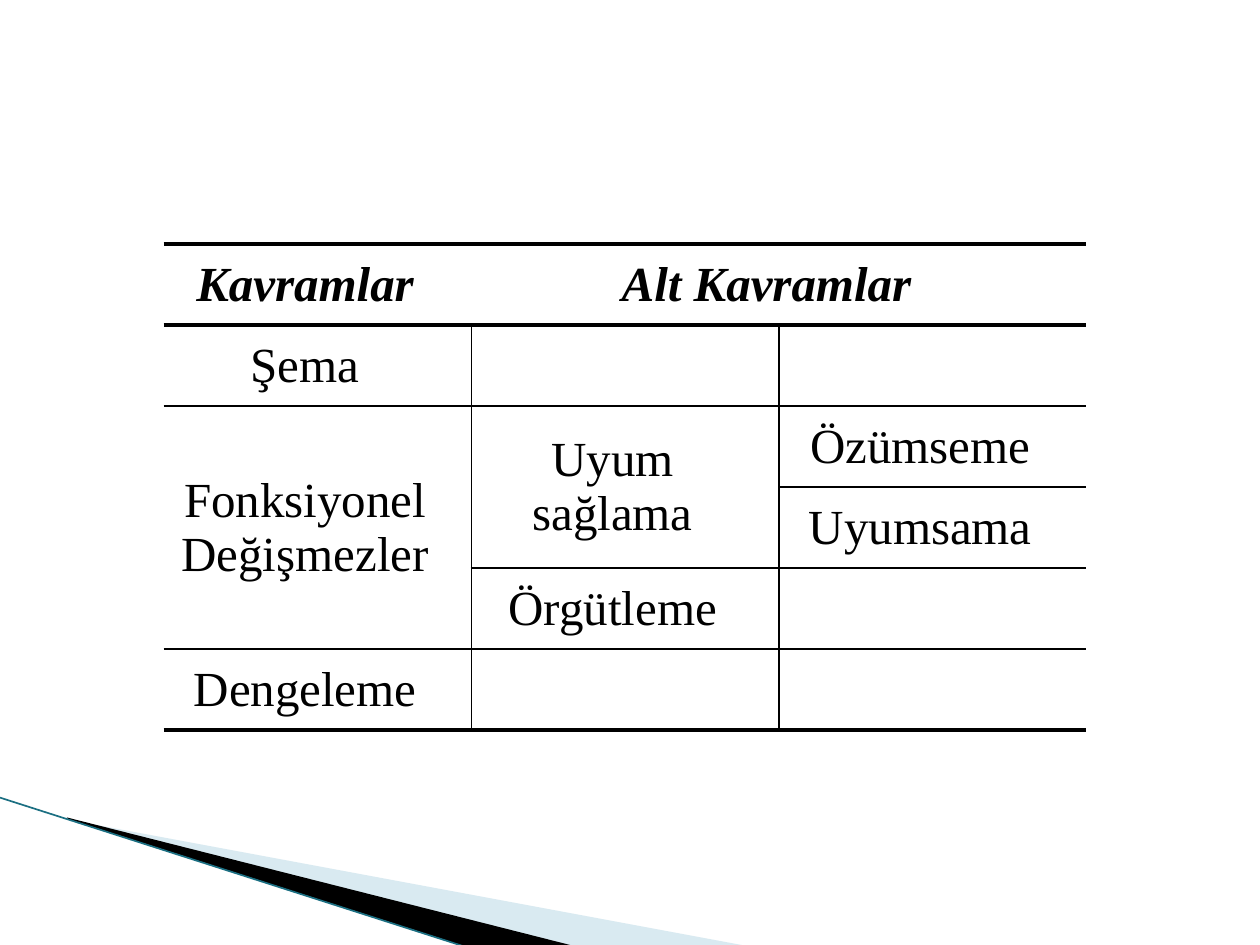
from dataclasses import dataclass
from itertools import product

from lxml.etree import SubElement
from pptx import Presentation
from pptx.dml.color import RGBColor as Rgb
from pptx.enum.shapes import MSO_CONNECTOR as Connector
from pptx.enum.text import MSO_ANCHOR as Anchor, PP_ALIGN as Align
from pptx.oxml import parse_xml
from pptx.oxml.ns import nsdecls, qn
from pptx.util import Cm, Pt


@dataclass(frozen=True)
class Theme:
    font: str = "Times New Roman"
    size: int = 28
    ink: str = "000000"
    pale: str = "A0CBDC"
    edge: str = "1B6F82"
    pale_opacity: int = 40
    edge_width: float = 0.95
    thick: float = 2.25
    thin: float = 1


THEME = Theme()
ROWS, COLS = 6, 3

CONCEPTS = [
    ("Kavramlar", 0, 0, 1, 1),
    ("Alt Kavramlar", 0, 1, 1, 2),
    ("Şema", 1, 0, 1, 1),
    ("", 1, 1, 1, 1),
    ("", 1, 2, 1, 1),
    ("Fonksiyonel Değişmezler", 2, 0, 3, 1),
    ("Uyum sağlama", 2, 1, 2, 1),
    ("Özümseme", 2, 2, 1, 1),
    ("Uyumsama", 3, 2, 1, 1),
    ("Örgütleme", 4, 1, 1, 1),
    ("", 4, 2, 1, 1),
    ("Dengeleme", 5, 0, 1, 1),
    ("", 5, 1, 1, 1),
    ("", 5, 2, 1, 1),
]


def write_text(frame, text, size=THEME.size, color=THEME.ink, bold=False,
               italic=False, align=Align.CENTER):
    paragraph = frame.paragraphs[0]
    paragraph.alignment = align
    run = paragraph.add_run()
    run.text = text
    run.font.name = THEME.font
    run.font.size = Pt(size)
    run.font.bold = bold
    run.font.italic = italic
    run.font.color.rgb = Rgb.from_string(color)


def set_borders(cell, left, right, top, bottom):
    properties = cell._tc.get_or_add_tcPr()
    sides = {"lnL": left, "lnR": right, "lnT": top, "lnB": bottom}
    for position, (side, weight) in enumerate(sides.items()):
        paint = (f'<a:solidFill><a:srgbClr val="{THEME.ink}"/></a:solidFill>'
                 if weight else "<a:noFill/>")
        properties.insert(position, parse_xml(
            f'<a:{side} {nsdecls("a")} w="{Pt(weight)}">{paint}</a:{side}>'))


def rule_weight(row):
    return THEME.thick if row in (0, 1, ROWS) else THEME.thin


def add_concept(table, text, row, col, height, width):
    last_row, last_col = row + height - 1, col + width - 1
    origin = table.cell(row, col)
    if height * width > 1:
        origin.merge(table.cell(last_row, last_col))
    for r, c in product(range(row, last_row + 1), range(col, last_col + 1)):
        cell = table.cell(r, c)
        cell.fill.background()
        set_borders(
            cell,
            left=THEME.thin if c == col > 0 and r > 0 else 0,
            right=THEME.thin if c == last_col < COLS - 1 and r > 0 else 0,
            top=rule_weight(r) if r == row else 0,
            bottom=rule_weight(r + 1) if r == last_row else 0)
    if text:
        origin.vertical_anchor = Anchor.MIDDLE
        origin.margin_left, origin.margin_right = Cm(0.18), Cm(0.68)
        origin.margin_top = origin.margin_bottom = 0
        header = row == 0
        write_text(origin.text_frame, text, bold=header, italic=header)


def add_concept_table(slide, left, top, width, height):
    table = slide.shapes.add_table(
        ROWS, COLS, Cm(left), Cm(top), Cm(width), Cm(height)).table
    table.first_row = table.horz_banding = False
    for column in table.columns:
        column.width = Cm(width / COLS)
    for row in table.rows:
        row.height = Cm(height / ROWS)
    for concept in CONCEPTS:
        add_concept(table, *concept)


def add_wedge(slide, left, top, points, color, opacity=100):
    corners = [(Cm(left + x), Cm(top + y)) for x, y in points]
    builder = slide.shapes.build_freeform(*corners[0])
    builder.add_line_segments(corners[1:], close=True)
    wedge = builder.convert_to_shape()
    wedge.shadow.inherit = False
    wedge.line.fill.background()
    wedge.fill.solid()
    wedge.fill.fore_color.rgb = Rgb.from_string(color)
    if opacity < 100:
        tint = wedge.fill._xPr.find(".//" + qn("a:srgbClr"))
        SubElement(tint, qn("a:alpha"), val=str(opacity * 1000))


def add_corner_sweep(slide, left, top, width, height):
    add_wedge(slide, left, top,
              [(1.4, 0.45), (15.11, 3), (11.58, 3), (1.4, 0.43)],
              THEME.pale, THEME.pale_opacity)
    add_wedge(slide, left, top,
              [(1.35, 0.4), (11.61, 3), (9.45, 3.02), (1.37, 0.43)],
              THEME.ink)
    edge = slide.shapes.add_connector(
        Connector.STRAIGHT, Cm(left), Cm(top),
        Cm(left + width), Cm(top + height))
    edge.line.color.rgb = Rgb.from_string(THEME.edge)
    edge.line.width = Pt(THEME.edge_width)
    SubElement(edge._element.spPr, qn("a:effectLst"))


def main():
    deck = Presentation()
    deck.slide_width, deck.slide_height = Cm(25.4), Cm(19.05)
    slide = deck.slides.add_slide(deck.slide_layouts.get_by_name("Blank"))
    add_corner_sweep(slide, left=0, top=16.08, width=9.42, height=3.02)
    add_concept_table(slide, left=3.3, top=4.92, width=18.6, height=9.8)
    deck.save("out.pptx")


if __name__ == "__main__":
    main()
